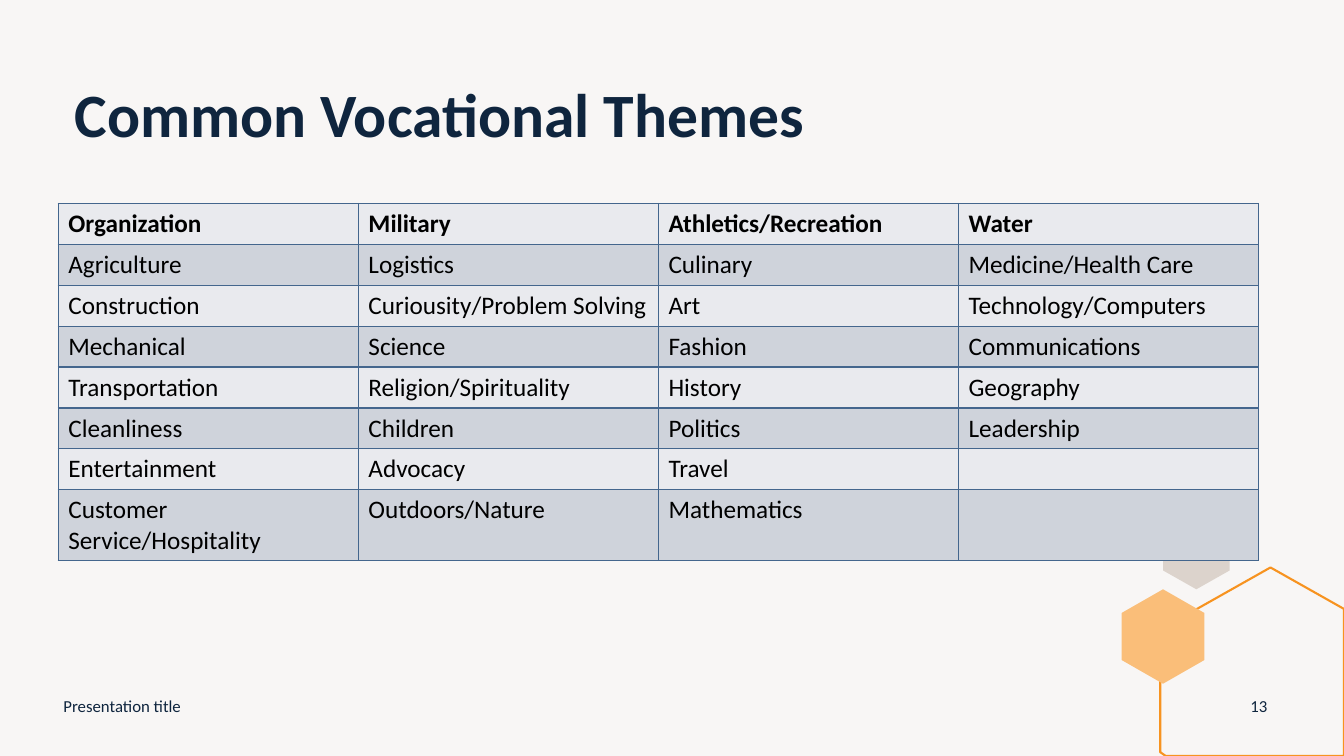
from lxml import etree
from pptx import Presentation
from pptx.dml.color import RGBColor
from pptx.enum.text import MSO_ANCHOR, PP_ALIGN
from pptx.oxml.ns import qn
from pptx.util import Cm, Pt

TOP, MIDDLE = MSO_ANCHOR.TOP, MSO_ANCHOR.MIDDLE
LEFT, CENTER = PP_ALIGN.LEFT, PP_ALIGN.CENTER
FONT = "Calibri"
NAVY, ORANGE, PEACH, SAND = "0F253E", "F79320", "FABE79", "DCD3CC"
PAPER, BLACK, EDGE = "F8F6F5", "000000", "44668D"
BANDS = ("E9EAEE", "CFD3DB")

# Outlines as shares of the box that holds them
HEXAGON = ((0.5, 0), (1, 0.25), (1, 0.75), (0.5, 1), (0, 0.75), (0, 0.25))
CROPPED = ((0.6, 0), (1, 0.22), (1, 1), (0.03, 1), (0, 0.98), (0, 0.33))

THEMES = (
    ("Organization", "Military", "Athletics/Recreation", "Water"),
    ("Agriculture", "Logistics", "Culinary", "Medicine/Health Care"),
    ("Construction", "Curiousity/Problem Solving", "Art", "Technology/Computers"),
    ("Mechanical", "Science", "Fashion", "Communications"),
    ("Transportation", "Religion/Spirituality", "History", "Geography"),
    ("Cleanliness", "Children", "Politics", "Leadership"),
    ("Entertainment", "Advocacy", "Travel", ""),
    ("Customer Service/Hospitality", "Outdoors/Nature", "Mathematics", ""),
)


def color(code):
    return RGBColor.from_string(code)


def paint(fill, code):
    fill.solid()
    fill.fore_color.rgb = color(code)


def style(par, size, code, bold=False):
    font = par.font
    font.name, font.size, font.bold = FONT, Pt(size), bold
    font.color.rgb = color(code)


def add_text(slide, box, text, size, bold=False, anchor=MIDDLE, align=LEFT):
    frame = slide.shapes.add_textbox(*map(Cm, box)).text_frame
    frame.word_wrap = True
    frame.vertical_anchor = anchor
    par = frame.paragraphs[0]
    par.text, par.alignment = text, align
    style(par, size, NAVY, bold)
    return par


def add_outline(slide, box, points, fill=None, line=None):
    left, top, width, height = box
    spots = [(Cm(left + x * width), Cm(top + y * height)) for x, y in points]
    pen = slide.shapes.build_freeform(*spots[0])
    pen.add_line_segments(spots[1:], close=True)
    shape = pen.convert_to_shape()
    shape.shadow.inherit = False
    if fill:
        paint(shape.fill, fill)
    else:
        shape.fill.background()
    if line:
        shape.line.color.rgb = color(line)
        shape.line.width = Pt(1.5)
    else:
        shape.line.fill.background()


def add_decor(slide, box):
    """Place the hexagon cluster in the corner box."""
    left, top, width, height = box
    add_outline(slide, (left + 1.04, top, 1.68, 1.9), HEXAGON, fill=SAND)
    add_outline(slide, (left + 0.97, top + 1.35, width - 0.97, height - 1.35),
                CROPPED, line=ORANGE)
    add_outline(slide, (left, top + 1.9, 2.08, 2.38), HEXAGON, fill=PEACH)


def set_edges(cell):
    props = cell._tc.get_or_add_tcPr()
    for place, side in enumerate(("a:lnL", "a:lnR", "a:lnT", "a:lnB")):
        line = etree.Element(qn(side), w=str(Pt(1)))
        solid = etree.SubElement(line, qn("a:solidFill"))
        etree.SubElement(solid, qn("a:srgbClr"), val=EDGE)
        props.insert(place, line)


def add_themes(slide, box):
    rows, cols = len(THEMES), len(THEMES[0])
    table = slide.shapes.add_table(rows, cols, *map(Cm, box)).table
    table.first_row = table.horz_banding = False
    for r, names in enumerate(THEMES):
        for c, name in enumerate(names):
            cell = table.cell(r, c)
            cell.text = name
            style(cell.text_frame.paragraphs[0], 18, BLACK, bold=r == 0)
            paint(cell.fill, BANDS[r % 2])
            set_edges(cell)


def add_footer(slide, box):
    left, top, width, height = box
    add_text(slide, (left, top, 11.43, height), "Presentation title", 12)
    add_text(slide, (left + width - 1.27, top, 1.27, height), "13", 12,
             align=CENTER)


def main():
    deck = Presentation()
    deck.slide_width, deck.slide_height = Cm(33.87), Cm(19.05)
    slide = deck.slides.add_slide(deck.slide_layouts[6])
    paint(slide.background.fill, PAPER)
    add_decor(slide, (28.27, 12.95, 5.6, 6.1))
    title = add_text(slide, (1.63, 2, 30.25, 3.94), "Common Vocational Themes",
                     44, bold=True, anchor=TOP)
    title.line_spacing = 0.9
    add_themes(slide, (1.47, 5.13, 30.25, 8.24))
    add_footer(slide, (1.35, 17.27, 31.01, 1.02))
    deck.save("out.pptx")


if __name__ == "__main__":
    main()
